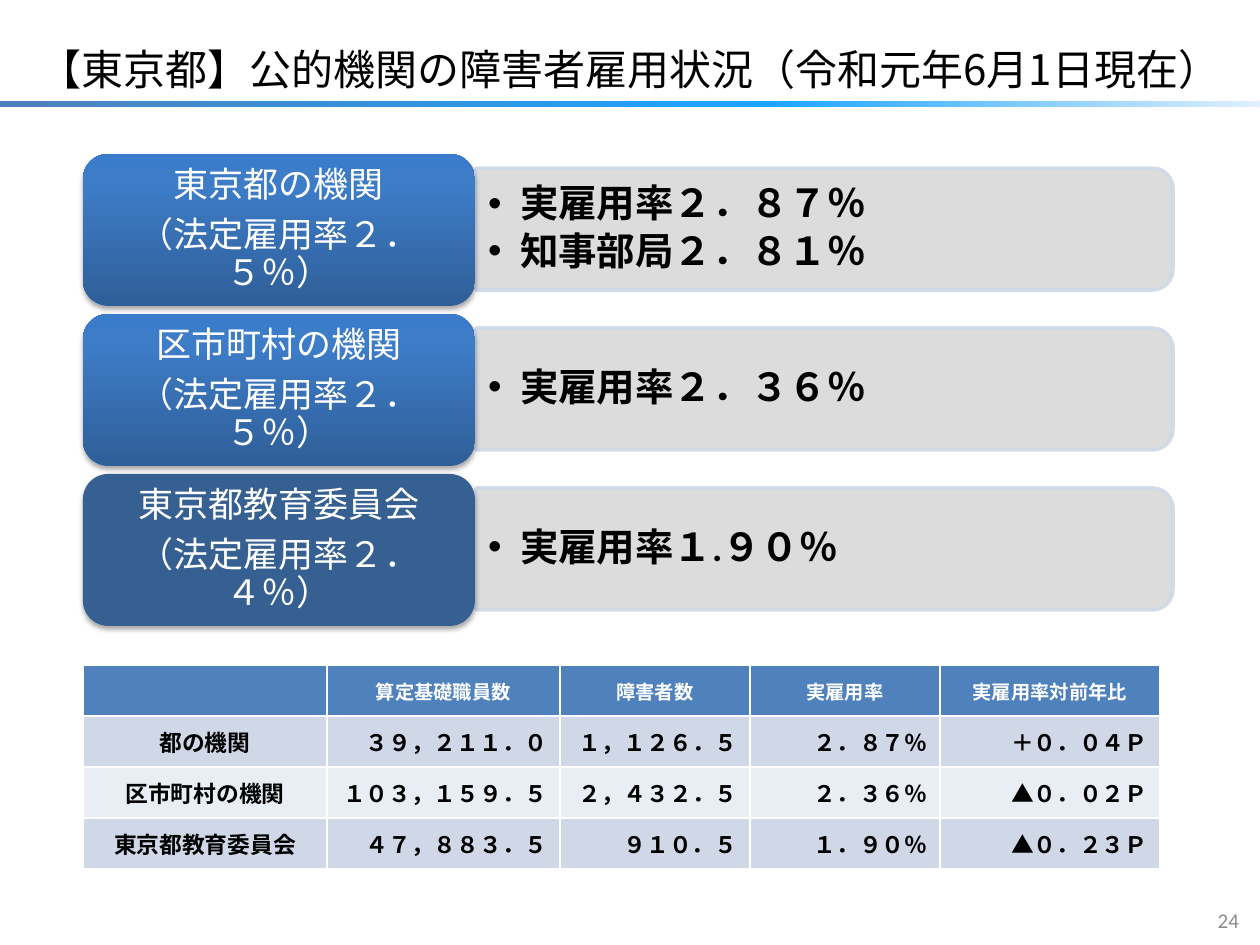
from dataclasses import dataclass

from lxml.etree import SubElement
from pptx import Presentation
from pptx.dml.color import RGBColor
from pptx.enum.lang import MSO_LANGUAGE_ID
from pptx.enum.shapes import MSO_SHAPE
from pptx.enum.text import MSO_ANCHOR, MSO_AUTO_SIZE, PP_ALIGN
from pptx.oxml.ns import qn
from pptx.util import Emu, Pt

SCALE = 914400 / 126  # EMU in one px


@dataclass(frozen=True)
class Theme:
    font: str = "Calibri"
    agency_font: str = "Arial"
    title_font: str = "Noto Sans CJK JP"
    black: str = "000000"
    white: str = "FFFFFF"
    grey: str = "8C8C8C"
    panel: str = "D9D9D9"
    pale: str = "D0D8E8"
    paler: str = "E9EDF4"
    header: str = "4F81BD"
    flat_label: str = "376092"
    label_stops: tuple = ((0, "2F5F99"), (80, "3D7CC7"), (100, "3A7CCB"))
    rule_stops: tuple = ((0, "4F81BD"), (61, "1CA5FF"), (100, "E0EFFF"))
    title_size: int = 24
    list_size: int = 22
    label_size: int = 20
    cell_size: int = 13
    header_size: int = 11
    number_size: int = 12


THEME = Theme()

GROUPS = [
    (["東京都の機関", "（法定雇用率２．５％）"], ["実雇用率２．８７％", "知事部局２．８１％"],
     THEME.agency_font, THEME.label_stops),
    (["区市町村の機関", "（法定雇用率２．５％）"], ["実雇用率２．３６％"],
     THEME.font, THEME.label_stops),
    (["東京都教育委員会", "（法定雇用率２．４％）"], ["実雇用率１.９０％"],
     THEME.font, None),
]

TABLE_ROWS = [
    ["", "算定基礎職員数", "障害者数", "実雇用率", "実雇用率対前年比"],
    ["都の機関", "３９，２１１．０", "１，１２６．５", "２．８７％", "＋０．０４Ｐ"],
    ["区市町村の機関", "１０３，１５９．５", "２，４３２．５", "２．３６％", "▲０．０２Ｐ"],
    ["東京都教育委員会", "４７，８８３．５", "９１０．５", "１．９０％", "▲０．２３Ｐ"],
]
COLUMN_WIDTHS = [244, 233, 190, 190, 220]


def px(length):
    return Emu(round(length * SCALE))


def place(shape, left, top, width, height):
    shape.left, shape.top = px(left), px(top)
    shape.width, shape.height = px(width), px(height)


def write(frame, lines, size, color, font=THEME.font, bold=False,
          align=PP_ALIGN.CENTER, margins=(12, 6)):
    """Fill a text frame with one paragraph for each line."""
    frame.word_wrap = True
    frame.auto_size = MSO_AUTO_SIZE.NONE
    frame.vertical_anchor = MSO_ANCHOR.MIDDLE
    frame.margin_left = frame.margin_right = px(margins[0])
    frame.margin_top = frame.margin_bottom = px(margins[1])
    frame.text = "\n".join(lines)
    for para in frame.paragraphs:
        style_paragraph(para, size, color, font, bold, align)


def style_paragraph(para, size, color, font, bold, align):
    para.alignment = align
    para.space_before = Pt(0)
    para.font.name, para.font.size, para.font.bold = font, Pt(size), bold
    para.font.color.rgb = RGBColor.from_string(color)
    para.font.language_id = MSO_LANGUAGE_ID.JAPANESE


def space_lines(frame, after):
    for para in frame.paragraphs:
        para.line_spacing = 0.9
        para.space_after = Pt(after)


def add_plain(page, kind, left, top, width, height, color):
    shape = page.shapes.add_shape(kind, px(left), px(top), px(width), px(height))
    shape.shadow.inherit = False
    shape.fill.solid()
    shape.fill.fore_color.rgb = RGBColor.from_string(color)
    shape.line.fill.background()
    return shape


def set_gradient(shape, stops, angle):
    properties = shape.element.spPr
    solid = properties.find(qn("a:solidFill"))
    gradient = solid.makeelement(qn("a:gradFill"), {"rotWithShape": "1"})
    stop_list = SubElement(gradient, qn("a:gsLst"))
    for position, color in stops:
        stop = SubElement(stop_list, qn("a:gs"), pos=str(position * 1000))
        SubElement(stop, qn("a:srgbClr"), val=color)
    SubElement(gradient, qn("a:lin"), ang=str(angle * 60000), scaled="0")
    properties.replace(solid, gradient)


def set_alpha(fill_element, percent):
    color = fill_element.find(".//" + qn("a:srgbClr"))
    SubElement(color, qn("a:alpha"), val=str(percent * 1000))


def add_shadow(shape):
    effects = shape.element.spPr.find(qn("a:effectLst"))
    shadow = SubElement(effects, qn("a:outerShdw"), blurRad="40000", dist="23000",
                        dir="5400000", rotWithShape="0")
    color = SubElement(shadow, qn("a:srgbClr"), val=THEME.black)
    SubElement(color, qn("a:alpha"), val="35000")


def add_heading(page, left, top, width):
    """Title with the gradient rule below it."""
    title = page.shapes.title
    place(title, left, top, width, 63)
    write(title.text_frame, ["【東京都】公的機関の障害者雇用状況（令和元年6月1日現在）"],
          THEME.title_size, THEME.black, THEME.title_font)
    rule = add_plain(page, MSO_SHAPE.RECTANGLE, left, top + 64, width, 6, THEME.header)
    set_gradient(rule, THEME.rule_stops, 0)


def add_group(page, body, left, top, group):
    """Label on the left, panel with its bulleted rates on the right."""
    label_lines, rates, font, stops = group
    label_width, label_height, panel_width, panel_height = 392, 152, 697, 122
    panel_left = left + label_width + 1
    middle = top + label_height / 2 - 1

    # The panel stands upright and is turned so that its round end faces right
    panel = add_plain(page, MSO_SHAPE.ROUND_2_SAME_RECTANGLE,
                      panel_left + (panel_width - panel_height) / 2,
                      middle - panel_width / 2, panel_height, panel_width, THEME.panel)
    panel.rotation = 90
    panel.line.color.rgb = RGBColor.from_string(THEME.pale)
    panel.line.width = Pt(2)
    for tag in ("a:solidFill", "a:ln"):
        set_alpha(panel.element.spPr.find(qn(tag)), 90)

    # Bulleted rates, brought in front of the panel
    place(body, panel_left, middle - 55, panel_width - 5, 110)
    write(body.text_frame, rates, THEME.list_size, THEME.black, bold=True,
          align=PP_ALIGN.LEFT)
    space_lines(body.text_frame, 3.3)
    for para in body.text_frame.paragraphs:
        properties = para._p.get_or_add_pPr()
        properties.set("marL", str(px(32)))
        properties.set("indent", str(px(-32)))
        bullet = properties.makeelement(qn("a:buChar"), {"char": "•"})
        properties.find(qn("a:defRPr")).addprevious(bullet)
    body.element.getparent().append(body.element)

    # Label
    label = add_plain(page, MSO_SHAPE.ROUNDED_RECTANGLE, left, top,
                      label_width, label_height, THEME.flat_label)
    if stops:
        set_gradient(label, stops, 270)
    add_shadow(label)
    write(label.text_frame, label_lines, THEME.label_size, THEME.white, font,
          margins=(10, 5))
    space_lines(label.text_frame, 7)


def add_rate_table(page, left, top, row_height):
    table = page.shapes.add_table(
        len(TABLE_ROWS), len(COLUMN_WIDTHS), px(left), px(top),
        px(sum(COLUMN_WIDTHS)), px(row_height * len(TABLE_ROWS))).table
    for column, width in zip(table.columns, COLUMN_WIDTHS):
        column.width = px(width)
    for r, texts in enumerate(TABLE_ROWS):
        table.rows[r].height = px(row_height)
        is_header = r == 0
        size = THEME.header_size if is_header else THEME.cell_size
        color = THEME.white if is_header else THEME.black
        fill = THEME.header if is_header else (THEME.paler, THEME.pale)[r % 2]
        for c, text in enumerate(texts):
            cell = table.cell(r, c)
            cell.fill.solid()
            cell.fill.fore_color.rgb = RGBColor.from_string(fill)
            cell.vertical_anchor = MSO_ANCHOR.MIDDLE
            cell.text = text
            align = PP_ALIGN.CENTER if is_header or c == 0 else PP_ALIGN.RIGHT
            style_paragraph(cell.text_frame.paragraphs[0], size, color,
                            THEME.font, True, align)


def add_page_number(page, left, top, width, height):
    box = page.shapes.add_textbox(px(left), px(top), px(width), px(height))
    write(box.text_frame, ["24"], THEME.number_size, THEME.grey, align=PP_ALIGN.RIGHT)


def main():
    deck = Presentation()
    deck.slide_width, deck.slide_height = px(1260), px(945)
    page = deck.slides.add_slide(deck.slide_layouts.get_by_name("Comparison"))
    _, *bodies, spare = page.placeholders
    spare.element.getparent().remove(spare.element)

    add_heading(page, 0, 37, 1260)
    for index, (body, group) in enumerate(zip(bodies, GROUPS)):
        add_group(page, body, 83, 154 + 160 * index, group)
    add_rate_table(page, 83, 665, 51)
    add_page_number(page, 1197, 895, 54, 50)
    deck.save("out.pptx")


if __name__ == "__main__":
    main()
